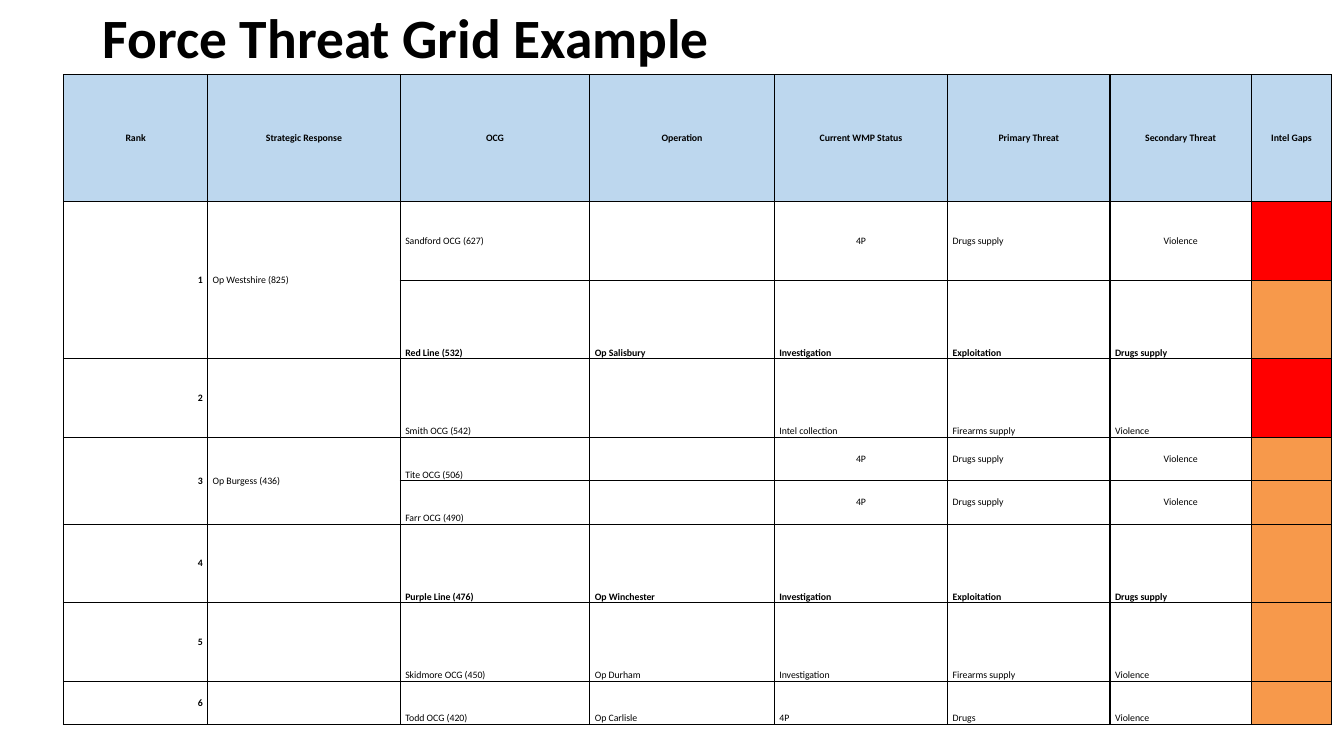
from lxml import etree
from pptx import Presentation
from pptx.dml.color import RGBColor
from pptx.enum import text as tx
from pptx.oxml import ns
from pptx.util import Inches, Pt

BLACK = RGBColor(0, 0, 0)
WHITE = RGBColor(255, 255, 255)
BLUE = RGBColor(0xBD, 0xD7, 0xEE)
RED = RGBColor(255, 0, 0)
AMBER = RGBColor(0xF7, 0x99, 0x4B)

LEFT, MID, RIGHT = tx.PP_ALIGN.LEFT, tx.PP_ALIGN.CENTER, tx.PP_ALIGN.RIGHT
MIDDLE, BOTTOM = tx.MSO_ANCHOR.MIDDLE, tx.MSO_ANCHOR.BOTTOM

WIDTHS = [1.43, 1.91, 1.88, 1.83, 1.72, 1.61, 1.4, 0.8]
HEIGHTS = [1.26, 0.78, 0.78, 0.78, 0.43, 0.43, 0.78, 0.78, 0.43]
HEADS = ["Rank", "Strategic Response", "OCG", "Operation", "Current WMP Status",
         "Primary Threat", "Secondary Threat", "Intel Gaps"]
# rank, response, group, operation, status, primary threat, secondary threat
GROUPS = [
    ["1", "Op Westshire (825)", "Sandford OCG (627)", "", "4P", "Drugs supply", "Violence"],
    ["", "", "Red Line (532)", "Op Salisbury", "Investigation", "Exploitation", "Drugs supply"],
    ["2", "", "Smith OCG (542)", "", "Intel collection", "Firearms supply", "Violence"],
    ["3", "Op Burgess (436)", "Tite OCG (506)", "", "4P", "Drugs supply", "Violence"],
    ["", "", "Farr OCG (490)", "", "4P", "Drugs supply", "Violence"],
    ["4", "", "Purple Line (476)", "Op Winchester", "Investigation", "Exploitation", "Drugs supply"],
    ["5", "", "Skidmore OCG (450)", "Op Durham", "Investigation", "Firearms supply", "Violence"],
    ["6", "", "Todd OCG (420)", "Op Carlisle", "4P", "Drugs", "Violence"],
]
GAPS = [RED, AMBER, RED, AMBER, AMBER, AMBER, AMBER, AMBER]


def write(frame, words, size=7, bold=False, align=LEFT, spacing=None):
    para = frame.paragraphs[0]
    para.alignment = align
    para.line_spacing = spacing
    para.font.size = Pt(size)
    if words:
        run = para.add_run()
        run.text = words
        font = run.font
        font.name, font.size, font.bold = "Calibri", Pt(size), bold
        font.color.rgb = BLACK


def edge(cell):
    """Draw a one-point black border on all four sides."""
    props = cell._tc.get_or_add_tcPr()
    for side in ("lnL", "lnR", "lnT", "lnB"):
        line = etree.SubElement(props, ns.qn("a:" + side), w=str(Pt(1)))
        paint = etree.SubElement(line, ns.qn("a:solidFill"))
        etree.SubElement(paint, ns.qn("a:srgbClr"), val=str(BLACK))


def put(cell, words="", fill=WHITE, anchor=MIDDLE, **style):
    cell.margin_left = cell.margin_right = Inches(0.05)
    cell.margin_top = cell.margin_bottom = 0
    cell.vertical_anchor = anchor
    edge(cell)
    cell.fill.solid()
    cell.fill.fore_color.rgb = fill
    write(cell.text_frame, words, **style)


def add_title(slide):
    title = slide.shapes.title
    title.left, title.top = Inches(0.92), Inches(0.1)
    title.width, title.height = Inches(11.5), Inches(0.6)
    frame = title.text_frame
    frame.auto_size = tx.MSO_AUTO_SIZE.NONE
    frame.vertical_anchor = MIDDLE
    write(frame, "Force Threat Grid Example", size=39.6, bold=True, spacing=0.9)


def add_row(grid, row, group, gap):
    """Fill one group; a 4P group without an operation has centred entries."""
    watched = group[4] == "4P" and not group[3]
    strong = "Line" in group[2]
    put(grid.cell(row, 0), group[0], bold=True, align=RIGHT)
    put(grid.cell(row, 1), group[1])
    for col in range(2, 7):
        high = watched and (col > 2 or row == 1)
        put(grid.cell(row, col), group[col], bold=strong,
            anchor=MIDDLE if high else BOTTOM,
            align=MID if watched and col in (4, 6) else LEFT)
    put(grid.cell(row, 7), fill=gap)


def add_grid(slide):
    grid = slide.shapes.add_table(
        len(HEIGHTS), len(WIDTHS), Inches(0.63), Inches(0.74),
        Inches(sum(WIDTHS)), Inches(sum(HEIGHTS))).table
    grid.first_row = grid.horz_banding = False
    for col, width in zip(grid.columns, WIDTHS):
        col.width = Inches(width)
    for row, height in zip(grid.rows, HEIGHTS):
        row.height = Inches(height)
    for col, head in enumerate(HEADS):
        put(grid.cell(0, col), head, fill=BLUE, bold=True, align=MID)
    for row, (group, gap) in enumerate(zip(GROUPS, GAPS), 1):
        add_row(grid, row, group, gap)
        if not group[0]:
            for col in (0, 1):
                grid.cell(row - 1, col).merge(grid.cell(row, col))


def main():
    deck = Presentation()
    deck.slide_width, deck.slide_height = Inches(13.33), Inches(7.5)
    slide = deck.slides.add_slide(deck.slide_layouts[5])
    add_title(slide)
    add_grid(slide)
    deck.save("out.pptx")


if __name__ == "__main__":
    main()
